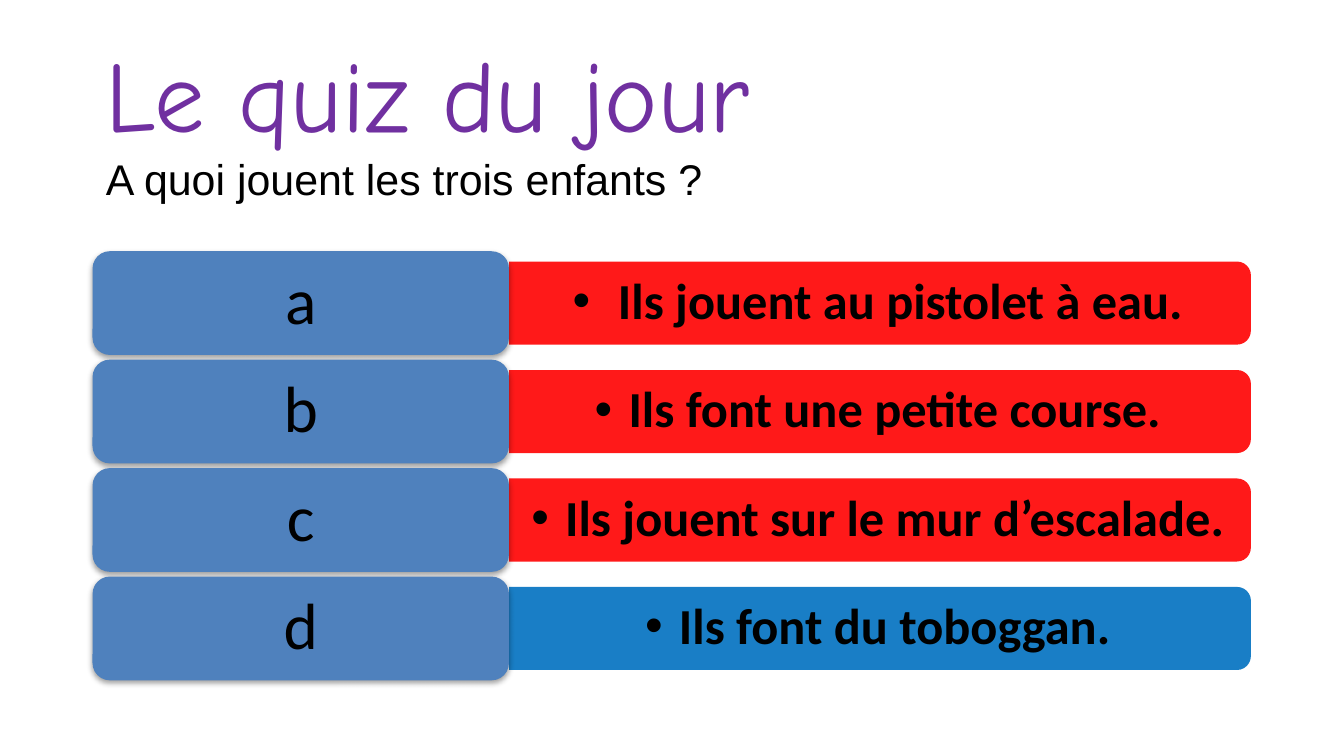
"""Build the daily quiz slide with one question and four lettered answers."""
from dataclasses import dataclass

from lxml import etree
from pptx import Presentation
from pptx.dml.color import RGBColor
from pptx.enum.shapes import MSO_SHAPE
from pptx.enum.text import MSO_ANCHOR, PP_ALIGN
from pptx.oxml.ns import qn
from pptx.util import Cm, Pt

ROUNDED = MSO_SHAPE.ROUNDED_RECTANGLE
ROUNDED_TOP = MSO_SHAPE.ROUND_2_SAME_RECTANGLE
MIDDLE = MSO_ANCHOR.MIDDLE
CENTER = PP_ALIGN.CENTER


@dataclass(frozen=True)
class Theme:
    title: RGBColor = RGBColor(0x70, 0x30, 0xA0)
    text: RGBColor = RGBColor(0, 0, 0)
    tag: RGBColor = RGBColor(0x4F, 0x81, 0xBD)
    wrong: RGBColor = RGBColor(0xFF, 0, 0)
    right: RGBColor = RGBColor(0, 0x70, 0xC0)
    title_font: str = "Comic Neue"
    question_font: str = "Arial"
    answer_font: str = "Calibri"
    title_size: int = 54
    question_size: int = 23
    tag_size: int = 35
    answer_size: int = 27


THEME = Theme()
LEFT, FIRST_TOP, ROW_PITCH = 1.75, 4.75, 2.05
TAG_WIDTH, TAG_HEIGHT = 7.87, 1.96
BAR_WIDTH, BAR_HEIGHT = 14.02, 1.57
ANSWERS = [
    ("a", " Ils jouent au pistolet à eau.", THEME.wrong),
    ("b", "Ils font une petite course.", THEME.wrong),
    ("c", "Ils jouent sur le mur d’escalade.", THEME.wrong),
    ("d", "Ils font du toboggan.", THEME.right),
]


def add_node(parent, tag, **attributes):
    return etree.SubElement(parent, qn(tag), attributes)


def set_font(font, name, size, color, bold=False):
    font.name, font.size, font.bold = name, Pt(size), bold
    font.color.rgb = color


def add_text_box(page, left, top, width, height):
    box = page.shapes.add_textbox(Cm(left), Cm(top), Cm(width), Cm(height))
    box.text_frame.word_wrap = True
    box.text_frame.vertical_anchor = MIDDLE
    return box


def add_filled_shape(page, kind, left, top, width, height, color):
    shape = page.shapes.add_shape(kind, Cm(left), Cm(top), Cm(width), Cm(height))
    shape.shadow.inherit = False
    shape.fill.solid()
    shape.fill.fore_color.rgb = color
    shape.line.fill.background()
    return shape


def add_heading(page, title, question):
    box = add_text_box(page, LEFT, 0.51, 21.9, 3.43)
    para = box.text_frame.paragraphs[0]
    span = para.add_run()
    span.text = title
    set_font(span.font, THEME.title_font, THEME.title_size, THEME.title)
    para.add_line_break()
    span = para.add_run()
    span.text = question
    set_font(span.font, THEME.question_font, THEME.question_size, THEME.text)


def add_bar(page, left, middle, color):
    center = left + BAR_WIDTH / 2
    bar = add_filled_shape(page, ROUNDED_TOP, center - BAR_HEIGHT / 2,
                           middle - BAR_WIDTH / 2, BAR_HEIGHT, BAR_WIDTH, color)
    bar.rotation = 90
    fill_color = bar._element.spPr.find(qn("a:solidFill"))[0]
    add_node(fill_color, "a:alpha", val="90000")


def add_answer(page, left, middle, text):
    box = add_text_box(page, left, middle - 0.71, 13.94, 1.42)
    frame = box.text_frame
    frame.margin_left = frame.margin_right = Cm(0.28)
    frame.margin_top = frame.margin_bottom = Cm(0.15)
    para = frame.paragraphs[0]
    para.text, para.alignment, para.line_spacing = text, CENTER, 0.9
    properties = para._p.get_or_add_pPr()
    properties.set("marL", str(Cm(0.64)))
    properties.set("indent", str(-Cm(0.64)))
    add_node(properties, "a:buFont", typeface="Arial")
    add_node(properties, "a:buChar", char="•")
    set_font(para.font, THEME.answer_font, THEME.answer_size, THEME.text, bold=True)


def add_tag(page, top, letter):
    tag = add_filled_shape(page, ROUNDED, LEFT, top, TAG_WIDTH, TAG_HEIGHT, THEME.tag)
    effects = tag._element.spPr.find(qn("a:effectLst"))
    shadow = add_node(effects, "a:outerShdw", blurRad=str(Pt(3.1)), dist=str(Pt(1.6)),
                      dir="5400000", rotWithShape="0")
    shade = add_node(shadow, "a:srgbClr", val=str(THEME.text))
    add_node(shade, "a:alpha", val="38000")
    tag.text_frame.vertical_anchor = MIDDLE
    para = tag.text_frame.paragraphs[0]
    para.text, para.alignment, para.line_spacing = letter, CENTER, 0.9
    set_font(para.font, THEME.answer_font, THEME.tag_size, THEME.text)


def main():
    deck = Presentation()
    deck.slide_width, deck.slide_height = Cm(25.4), Cm(14.29)
    page = deck.slides.add_slide(deck.slide_layouts[6])
    add_heading(page, "Le quiz du jour", "A quoi jouent les trois enfants ?")
    for row, (letter, text, color) in enumerate(ANSWERS):
        top = FIRST_TOP + row * ROW_PITCH
        middle = top + TAG_HEIGHT / 2
        add_bar(page, LEFT + TAG_WIDTH, middle, color)
        add_answer(page, LEFT + TAG_WIDTH, middle, text)
        add_tag(page, top, letter)
    deck.save("out.pptx")


if __name__ == "__main__":
    main()
